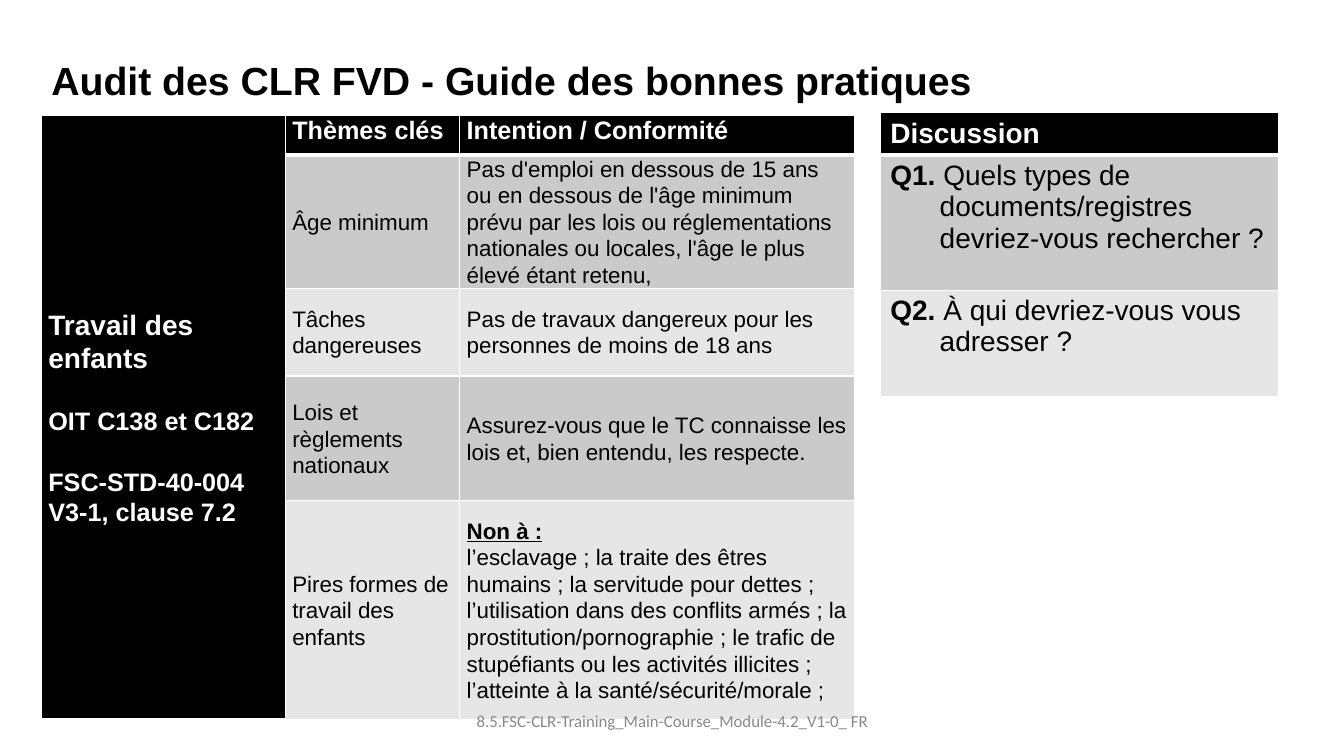
from dataclasses import dataclass
from typing import Optional

from lxml.etree import SubElement
from pptx import Presentation
from pptx.dml.color import RGBColor as RGB
from pptx.enum.text import MSO_ANCHOR as Anchor, PP_ALIGN as Align
from pptx.oxml.ns import qn
from pptx.util import Inches, Pt


@dataclass(frozen=True)
class Theme:
    font: str = "Arial"
    footer_font: str = "Calibri"
    black: str = "000000"
    white: str = "FFFFFF"
    grey: str = "888888"
    bands: tuple[str, str] = ("CACACA", "E6E6E6")
    title: int = 28
    large: int = 20
    medium: int = 18
    body: int = 16
    footer: int = 12


T = Theme()


@dataclass(frozen=True)
class Run:
    text: str
    size: int = T.body
    color: str = T.black
    bold: bool = False
    underline: bool = False
    font: str = T.font


@dataclass(frozen=True)
class Para:
    runs: list[Run]
    spacing: Optional[float] = None
    before: int = 0
    hanging: float = 0
    align: Align = Align.LEFT


@dataclass(frozen=True)
class Cell:
    paras: list[Para]
    fill: str
    anchor: Anchor = Anchor.MIDDLE
    heavy_bottom: bool = False


@dataclass(frozen=True)
class Grid:
    left: float
    top: float
    cols: list[float]
    rows: list[float]
    insets: tuple[float, float]
    cells: list[list[Cell]]


def write(tf, paras: list[Para]) -> None:
    for i, para in enumerate(paras):
        p = tf.paragraphs[0] if i == 0 else tf.add_paragraph()
        p.alignment = para.align
        p.space_before = Pt(para.before)
        if para.spacing:
            p.line_spacing = para.spacing
        if para.hanging:
            pPr = p._p.get_or_add_pPr()
            pPr.set("marL", str(Inches(para.hanging)))
            pPr.set("indent", str(-Inches(para.hanging)))
        for run in para.runs:
            r = p.add_run()
            r.text = run.text
            r.font.name = run.font
            r.font.size = Pt(run.size)
            r.font.bold = run.bold
            r.font.underline = run.underline
            r.font.color.rgb = RGB.from_string(run.color)


def draw_borders(cell, heavy_bottom: bool) -> None:
    tcPr = cell._tc.get_or_add_tcPr()
    for side in "LRTB":
        width = 3 if heavy_bottom and side == "B" else 1
        ln = SubElement(tcPr, qn(f"a:ln{side}"), w=str(Pt(width)))
        SubElement(SubElement(ln, qn("a:solidFill")), qn("a:srgbClr"), val=T.white)


def draw_grid(s, grid: Grid) -> None:
    table = s.shapes.add_table(
        len(grid.rows), len(grid.cols), Inches(grid.left), Inches(grid.top),
        Inches(sum(grid.cols)), Inches(sum(grid.rows))).table
    for col, width in zip(table.columns, grid.cols):
        col.width = Inches(width)
    for row, height in zip(table.rows, grid.rows):
        row.height = Inches(height)
    side, edge = grid.insets
    for r, row in enumerate(grid.cells):
        for c, item in enumerate(row):
            cell = table.cell(r, c)
            draw_borders(cell, item.heavy_bottom)
            cell.fill.solid()
            cell.fill.fore_color.rgb = RGB.from_string(item.fill)
            cell.vertical_anchor = item.anchor
            cell.margin_left = cell.margin_right = Inches(side)
            cell.margin_top = cell.margin_bottom = Inches(edge)
            write(cell.text_frame, item.paras)
    if len(grid.cols) > 1:
        table.cell(0, 0).merge(table.cell(len(grid.rows) - 1, 0))


def header(text: str, size: int, spacing: Optional[float] = None) -> Cell:
    run = Run(text, size, T.white, bold=True)
    return Cell([Para([run], spacing)], T.black, Anchor.TOP, heavy_bottom=True)


def themes_grid() -> Grid:
    spacing = 1.07
    topic = Cell([
        Para([Run(text, size, T.white, bold=True)], spacing, before)
        for text, size, before in (
            ("Travail des enfants", T.large, 0),
            ("OIT C138 et C182", T.medium, 22),
            ("FSC-STD-40-004 V3-1, clause 7.2", T.medium, 22))
    ], T.black, heavy_bottom=True)
    spanned = Cell([], T.black)
    themes = [
        ("Âge minimum", [Run(
            "Pas d'emploi en dessous de 15 ans ou en dessous de l'âge minimum prévu par "
            "les lois ou réglementations nationales ou locales, l'âge le plus élevé "
            "étant retenu,")]),
        ("Tâches dangereuses", [Run(
            "Pas de travaux dangereux pour les personnes de moins de 18 ans")]),
        ("Lois et règlements nationaux", [Run(
            "Assurez-vous que le TC connaisse les lois et, bien entendu, les respecte.")]),
        ("Pires formes de travail des enfants", [
            Run("Non à :", bold=True, underline=True),
            Run("l’esclavage ; la traite des êtres humains ; la servitude pour dettes ; "
                "l’utilisation dans des conflits armés ; la prostitution/pornographie ; "
                "le trafic de stupéfiants ou les activités illicites ; "
                "l’atteinte à la santé/sécurité/morale ;")]),
    ]
    cells = [[topic, header("Thèmes clés", T.medium, spacing),
              header("Intention / Conformité", T.medium, spacing)]]
    for i, (theme, intent) in enumerate(themes):
        fill = T.bands[i % 2]
        cells.append([spanned, Cell([Para([Run(theme)], spacing)], fill),
                      Cell([Para([run], spacing) for run in intent], fill)])
    return Grid(0.41, 1.14, [2.42, 1.73, 3.92], [0.4, 1.32, 0.87, 1.24, 2.14],
                (0.07, 0), cells)


def discussion_grid() -> Grid:
    questions = ["Quels types de documents/registres devriez-vous rechercher ?",
                 "À qui devriez-vous vous adresser ?"]
    cells = [[header("Discussion", T.large)]]
    for i, question in enumerate(questions):
        runs = [Run(f"Q{i + 1}. ", T.large, bold=True), Run(question, T.large)]
        cells.append([Cell([Para(runs, hanging=0.49)], T.bands[i % 2], Anchor.TOP)])
    return Grid(8.73, 1.12, [3.95], [0.42, 1.34, 1.06], (0.1, 0.05), cells)


def main() -> None:
    prs = Presentation()
    prs.slide_width, prs.slide_height = Inches(13.33), Inches(7.5)
    s = prs.slides.add_slide(prs.slide_layouts[5])

    draw_grid(s, themes_grid())

    title = s.shapes.title
    title.left, title.top = Inches(0.41), Inches(0.41)
    title.width, title.height = Inches(10.01), Inches(0.83)
    title.text_frame.vertical_anchor = Anchor.MIDDLE
    write(title.text_frame, [Para([Run(
        "Audit des CLR FVD - Guide des bonnes pratiques", T.title, bold=True)], 0.9)])

    draw_grid(s, discussion_grid())

    footer = s.shapes.add_textbox(Inches(4.42), Inches(6.95), Inches(4.5), Inches(0.4))
    footer.text_frame.word_wrap = True
    footer.text_frame.vertical_anchor = Anchor.MIDDLE
    write(footer.text_frame, [Para([Run(
        "8.5.FSC-CLR-Training_Main-Course_Module-4.2_V1-0_ FR",
        T.footer, T.grey, font=T.footer_font)], align=Align.CENTER)])

    prs.save("out.pptx")


if __name__ == "__main__":
    main()
